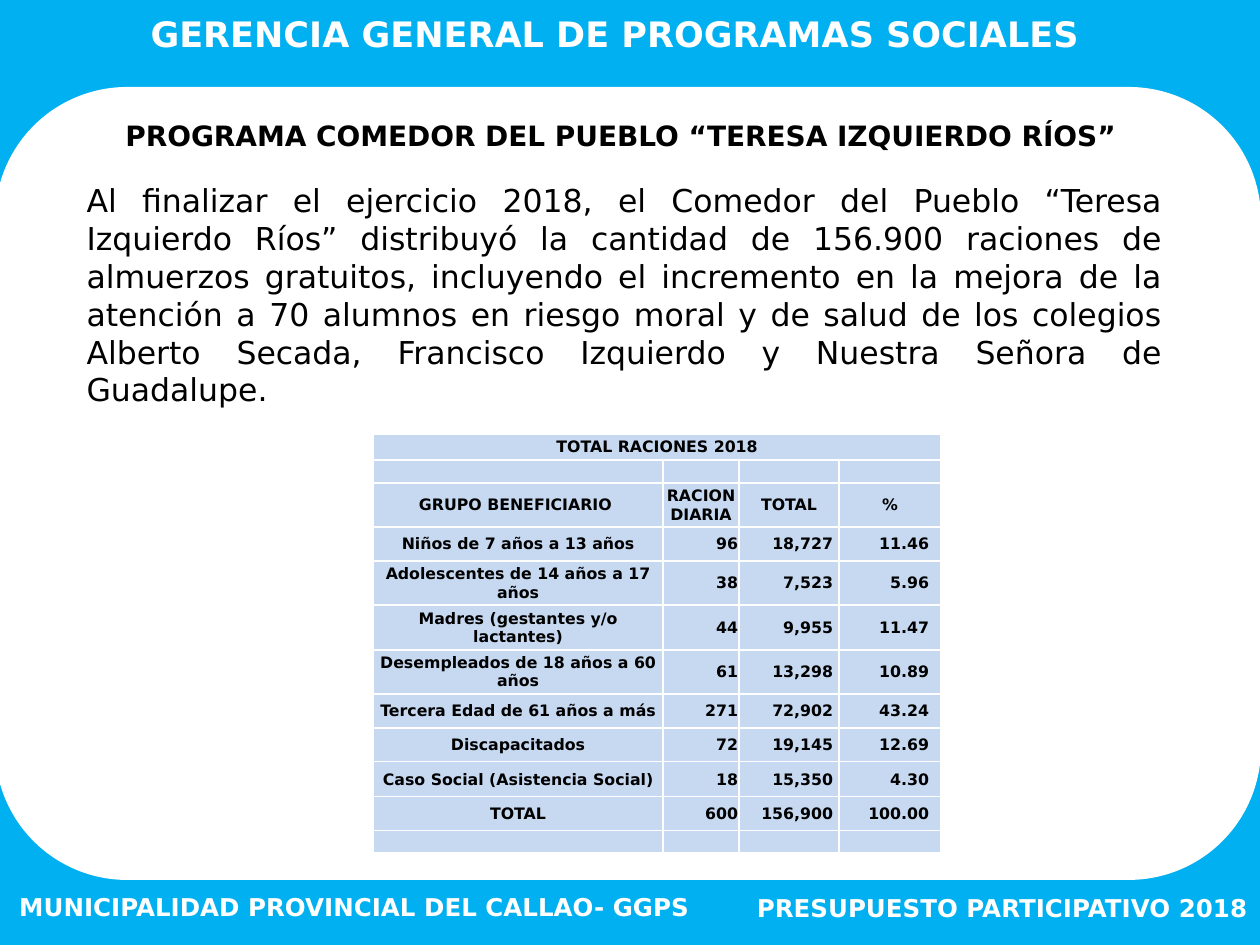
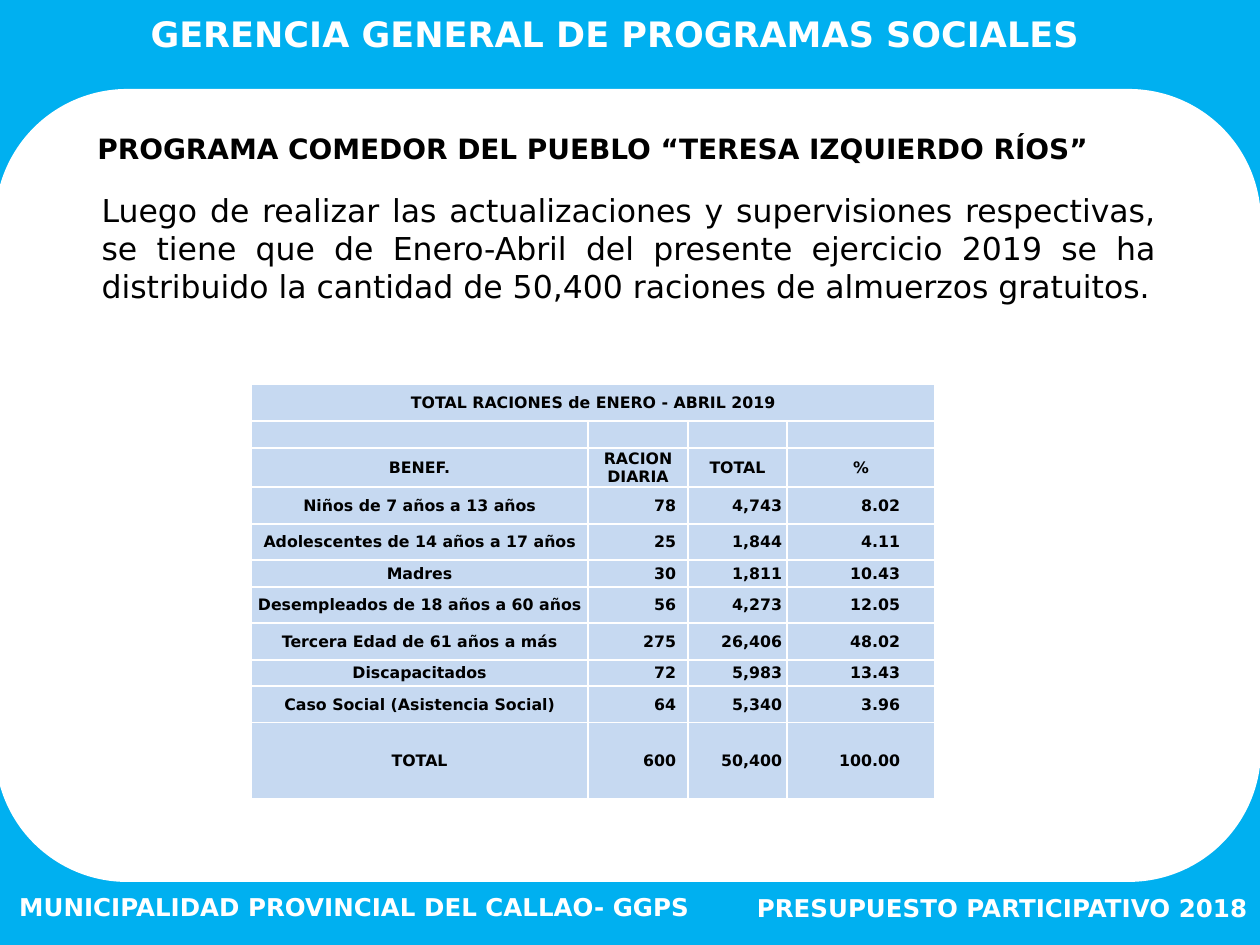
from lxml.etree import SubElement
from pptx import Presentation
from pptx.dml.color import RGBColor
from pptx.enum.shapes import MSO_SHAPE
from pptx.enum.text import MSO_ANCHOR, MSO_AUTO_SIZE, PP_ALIGN
from pptx.oxml import parse_xml
from pptx.oxml.ns import nsdecls, qn
from pptx.util import Pt

EMU_PER_PX = 914400 / 126
FONT = "DejaVu Sans"
COLORS = {"band": "00B0F0", "panel": "FFFFFF", "cell": "C6D9F1",
          "light": "FFFFFF", "dark": "000000"}


def px(*lengths):
    """Turn px lengths into EMU."""
    return [round(length * EMU_PER_PX) for length in lengths]


def write(frame, text, size=9, bold=True, color="dark", align=PP_ALIGN.CENTER,
          anchor=MSO_ANCHOR.TOP):
    frame.word_wrap = True
    frame.auto_size = MSO_AUTO_SIZE.NONE
    frame.vertical_anchor = anchor
    paragraph = frame.paragraphs[0]
    paragraph.alignment = align
    paragraph.space_before = Pt(0)
    run = paragraph.add_run()
    run.text = text
    run.font.name = FONT
    run.font.size = Pt(size)
    run.font.bold = bold
    run.font.color.rgb = RGBColor.from_string(COLORS[color])


# Content shared by both slides
HEADING = "GERENCIA GENERAL DE PROGRAMAS SOCIALES "
PROGRAM = "PROGRAMA COMEDOR DEL PUEBLO “TERESA IZQUIERDO RÍOS”"
FOOTERS = [
    ("PRESUPUESTO PARTICIPATIVO 2018", (709, 887, 551, 43)),
    ("MUNICIPALIDAD PROVINCIAL DEL CALLAO- GGPS", (-43, 886, 745, 43)),
]

# Content of each slide; number_insets are the right margins of the figures
REPORTS = [
    {
        "panel_top": 87,
        "program_at": (97, 112, 1048, 47),
        "summary_at": (74, 175, 1101, 242),
        "summary": "Al finalizar el ejercicio 2018, el Comedor del Pueblo “Teresa "
                   "Izquierdo Ríos” distribuyó la cantidad de 156.900 raciones de "
                   "almuerzos gratuitos, incluyendo el incremento en la mejora de la "
                   "atención a 70 alumnos en riesgo moral y de salud de los colegios "
                   "Alberto Secada, Francisco Izquierdo y Nuestra Señora de Guadalupe.",
        "table_at": (373, 434),
        "columns": [290, 76, 100, 102],
        "row_heights": [26, 23, 44, 34, 44, 45, 44, 34, 34, 35, 34, 22],
        "number_insets": [1, 6, 12],
        "rows": [
            ["TOTAL RACIONES 2018", "", "", ""],
            ["", "", "", ""],
            ["GRUPO BENEFICIARIO ", "RACION DIARIA", "TOTAL", "%"],
            ["Niños de 7 años a 13 años", "96", "18,727", "11.46"],
            ["Adolescentes de 14 años a 17 años", "38", "7,523", "5.96"],
            ["Madres (gestantes y/o lactantes)", "44", "9,955", "11.47"],
            ["Desempleados de 18 años a 60 años", "61", "13,298", "10.89"],
            ["Tercera Edad de 61 años a más", "271", "72,902", "43.24"],
            ["Discapacitados", "72", "19,145", "12.69"],
            ["Caso Social (Asistencia Social)", "18", "15,350", "4.30"],
            ["TOTAL", "600", "156,900", "100.00"],
            ["", "", "", ""],
        ],
    },
    {
        "panel_top": 89,
        "program_at": (77, 125, 1032, 47),
        "summary_at": (89, 185, 1080, 127),
        "summary": "Luego de realizar las actualizaciones y supervisiones respectivas, "
                   "se tiene que de Enero-Abril del presente ejercicio 2019 se ha "
                   "distribuido la cantidad de 50,400 raciones de almuerzos gratuitos.",
        "table_at": (251, 384),
        "columns": [337, 100, 99, 148],
        "row_heights": [37, 27, 39, 37, 36, 27, 36, 37, 26, 37, 76],
        "number_insets": [12, 5, 35],
        "rows": [
            ["TOTAL RACIONES de ENERO - ABRIL 2019", "", "", ""],
            ["", "", "", ""],
            ["BENEF.", "RACION DIARIA", "TOTAL", "%"],
            ["Niños de 7 años a 13 años", "78", "4,743", "8.02"],
            ["Adolescentes de 14 años a 17 años", "25", "1,844", "4.11"],
            ["Madres", "30", "1,811", "10.43"],
            ["Desempleados de 18 años a 60 años", "56", "4,273", "12.05"],
            ["Tercera Edad de 61 años a más", "275", "26,406", "48.02"],
            ["Discapacitados", "72", "5,983", "13.43"],
            ["Caso Social (Asistencia Social)", "64", "5,340", "3.96"],
            ["TOTAL", "600", "50,400", "100.00"],
        ],
    },
]
HEADER_ROW = 2

deck = Presentation()
deck.slide_width, deck.slide_height = px(1260, 945)

for report in REPORTS:
    slide = deck.slides.add_slide(deck.slide_layouts[1])
    shapes = slide.shapes
    heading, summary = slide.placeholders

    # Blue frame and rounded white panel
    for preset, color, at in [
        (MSO_SHAPE.RECTANGLE, "band", (-5, -4, 1265, 949)),
        (MSO_SHAPE.ROUNDED_RECTANGLE, "panel", (-5, report["panel_top"], 1266, 793)),
    ]:
        backdrop = shapes.add_shape(preset, *px(*at))
        backdrop.shadow.inherit = False
        backdrop.fill.solid()
        backdrop.fill.fore_color.rgb = RGBColor.from_string(COLORS[color])
        backdrop.line.fill.background()

    # Heading and summary, brought in front of the frame
    for placeholder, at in [(heading, (88, 6, 1066, 55)), (summary, report["summary_at"])]:
        placeholder.left, placeholder.top, placeholder.width, placeholder.height = px(*at)
        shapes.element.append(placeholder.element)
    write(heading.text_frame, HEADING, size=20, color="light")
    write(summary.text_frame, report["summary"], size=18, bold=False,
          align=PP_ALIGN.JUSTIFY)
    summary_format = summary.text_frame.paragraphs[0]._p.get_or_add_pPr()
    summary_format.set("marL", "0")
    summary_format.set("indent", "0")
    SubElement(summary_format, qn("a:buNone"))

    # Footers and program name
    for footer, at in FOOTERS:
        write(shapes.add_textbox(*px(*at)).text_frame, footer, size=14, color="light",
              align=PP_ALIGN.RIGHT)
    program = shapes.add_textbox(*px(*report["program_at"]))
    write(program.text_frame, PROGRAM, size=16)

    # Table of meals served
    rows, columns, heights = report["rows"], report["columns"], report["row_heights"]
    meals = shapes.add_table(len(rows), len(columns), *px(
        *report["table_at"], sum(columns), sum(heights))).table
    meals.first_row = meals.horz_banding = False
    for column, width in zip(meals.columns, px(*columns)):
        column.width = width
    for row, height in zip(meals.rows, px(*heights)):
        row.height = height
    meals.cell(0, 0).merge(meals.cell(0, len(columns) - 1))

    for r, row in enumerate(rows):
        for c, text in enumerate(row):
            cell = meals.cell(r, c)
            is_number = r > HEADER_ROW and c > 0
            right_inset = report["number_insets"][c - 1] if is_number else 1
            cell.margin_left, cell.margin_top, cell.margin_right, cell.margin_bottom = px(
                1, 1, right_inset, 0)
            cell.vertical_anchor = MSO_ANCHOR.MIDDLE
            cell.fill.solid()
            cell.fill.fore_color.rgb = RGBColor.from_string(COLORS["cell"])
            for position, side in enumerate("LRTB"):
                cell._tc.tcPr.insert(position, parse_xml(
                    f'<a:ln{side} {nsdecls("a")} w="12700"><a:solidFill>'
                    f'<a:srgbClr val="{COLORS["light"]}"/></a:solidFill></a:ln{side}>'))
            if text:
                write(cell.text_frame, text, anchor=None,
                      align=PP_ALIGN.RIGHT if is_number else PP_ALIGN.CENTER)
            else:
                # Small type keeps the empty rows low
                SubElement(cell.text_frame.paragraphs[0]._p, qn("a:endParaRPr"), sz="900")

deck.save("out.pptx")
